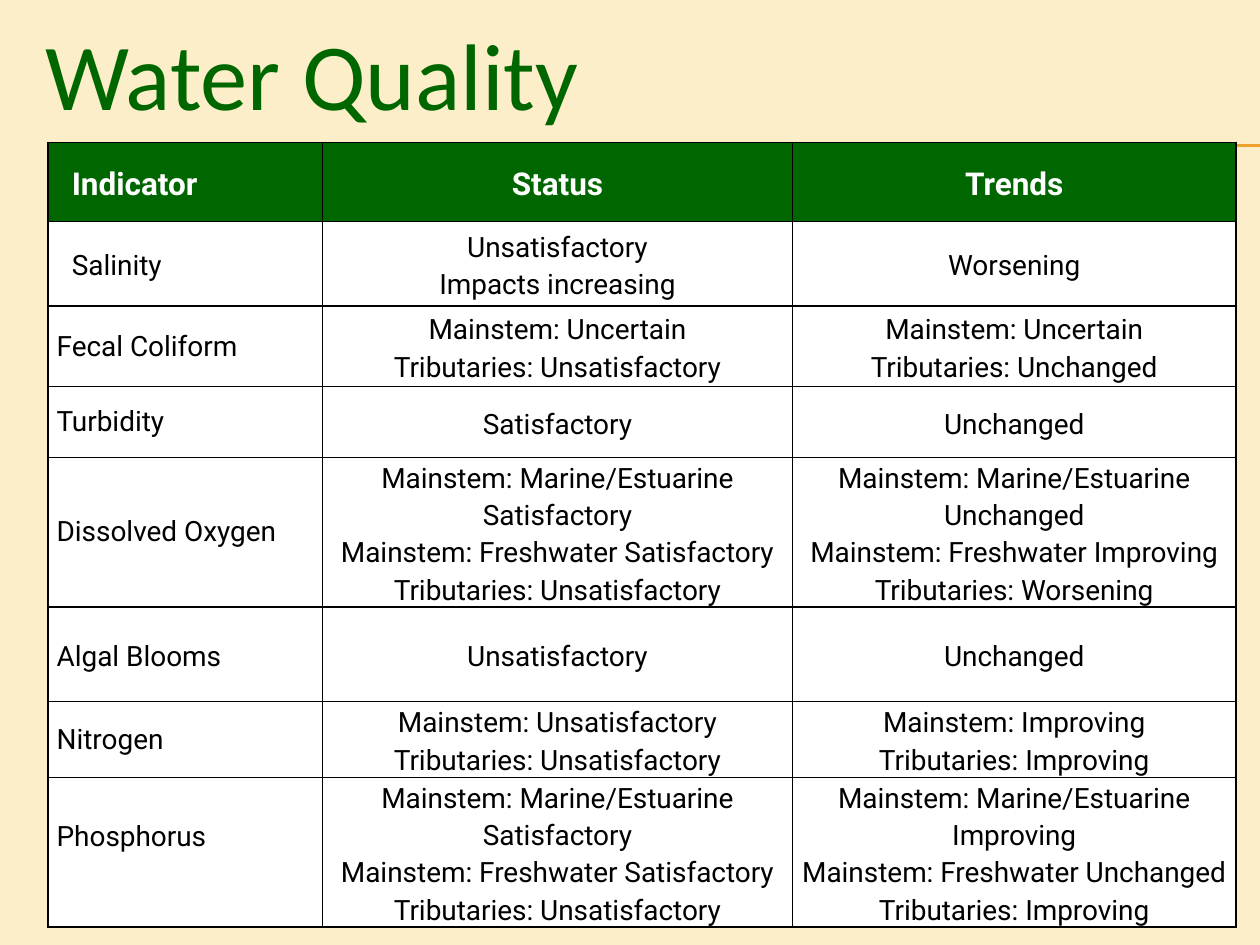
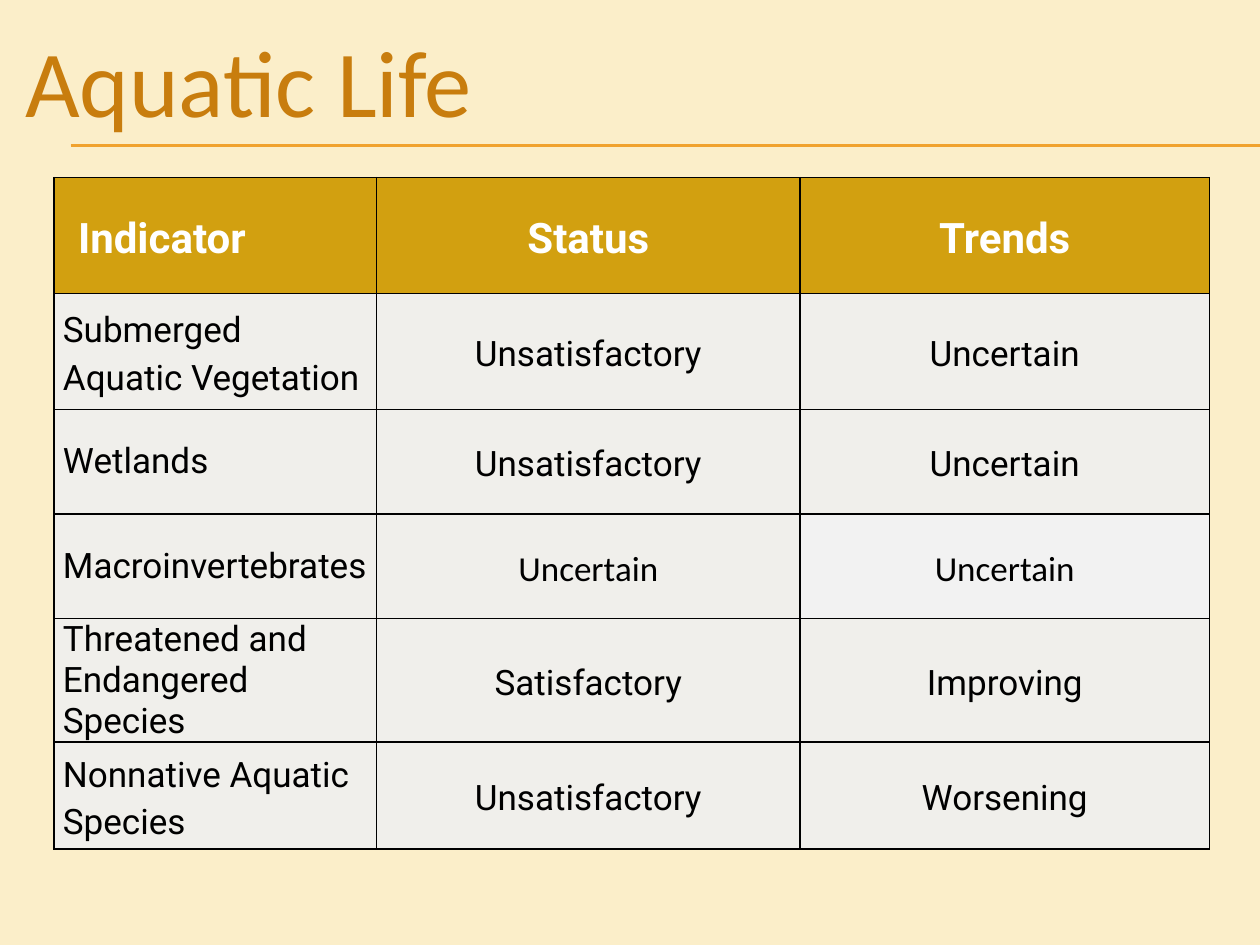
from dataclasses import dataclass
from lxml.etree import SubElement
from pptx import Presentation
from pptx.dml.color import RGBColor
from pptx.enum.shapes import MSO_CONNECTOR
from pptx.enum.text import MSO_ANCHOR, PP_ALIGN
from pptx.oxml import parse_xml
from pptx.oxml.ns import nsdecls, qn
from pptx.util import Inches, Pt

SAND, RULE, BLACK, WHITE = "FBEEC9", "F0A22E", "000000", "FFFFFF"
HEAD_FONT, BODY_FONT = "Calibri", "Roboto"
LOOSE = 1.15
RULE_LEFT, WIDTH, HEIGHT = 0.56, 10, 7.5


@dataclass
class Entry:
    height: float
    label: str
    status: str
    trend: str
    loose: bool = False
    indent: float = 0
    foot: float = 0
    font: str = BODY_FONT
    trend_fill: str = ""


@dataclass
class Page:
    title: str
    title_box: tuple[float, float, float, float]
    title_hue: str
    left: float
    top: float
    cols: list[float]
    head_fill: str
    body_fill: str
    head_size: int
    body_size: int
    rows: list[Entry]


def rgb(hue: str) -> RGBColor:
    return RGBColor.from_string(hue)


def header(height: float) -> Entry:
    return Entry(height, "Indicator", "Status", "Trends", True, 0.12)


def add_rules(slide) -> None:
    for y in (1.15, 1.16):
        rule = slide.shapes.add_connector(
            MSO_CONNECTOR.STRAIGHT, Inches(RULE_LEFT), Inches(y), Inches(WIDTH), Inches(y))
        rule.line.color.rgb = rgb(RULE)
        rule.line.width = Pt(0.75)
        SubElement(rule.element.spPr, qn("a:effectLst"))


def add_title(slide, page: Page) -> None:
    box = slide.shapes.add_textbox(*map(Inches, page.title_box))
    frame = box.text_frame
    frame.word_wrap = True
    frame.vertical_anchor = MSO_ANCHOR.MIDDLE
    para = frame.paragraphs[0]
    para.text = page.title
    para.font.size, para.font.name = Pt(54), HEAD_FONT
    para.font.color.rgb = rgb(page.title_hue)


def add_border(cell) -> None:
    props = cell._tc.get_or_add_tcPr()
    for spot, side in enumerate("LRTB"):
        props.insert(spot, parse_xml(
            f'<a:ln{side} {nsdecls("a")} w="{Pt(1)}"><a:solidFill>'
            f'<a:srgbClr val="{BLACK}"/></a:solidFill></a:ln{side}>'))


def fill_cell(cell, text: str, fill: str, size: int, font: str, head: bool,
              center: bool, loose: bool, indent: float, foot: float) -> None:
    cell.margin_left = cell.margin_right = Inches(0.07)
    cell.margin_top, cell.margin_bottom = 0, Inches(foot)
    cell.vertical_anchor = MSO_ANCHOR.MIDDLE
    cell.fill.solid()
    cell.fill.fore_color.rgb = rgb(fill)
    add_border(cell)
    cell.text_frame.text = text
    for para in cell.text_frame.paragraphs:
        para.alignment = PP_ALIGN.CENTER if center else PP_ALIGN.LEFT
        para.line_spacing = LOOSE if loose else 1.0
        if indent:
            para._p.get_or_add_pPr().set("marL", str(Inches(indent)))
        para.font.size, para.font.name, para.font.bold = Pt(size), font, head
        para.font.color.rgb = rgb(WHITE if head else BLACK)


def add_grid(slide, page: Page) -> None:
    table = slide.shapes.add_table(
        len(page.rows), len(page.cols), Inches(page.left), Inches(page.top),
        Inches(sum(page.cols)), Inches(sum(row.height for row in page.rows))).table
    for col, width in zip(table.columns, page.cols):
        col.width = Inches(width)
    for i, row in enumerate(page.rows):
        table.rows[i].height = Inches(row.height)
        head = i == 0
        fill = page.head_fill if head else page.body_fill
        size = page.head_size if head else page.body_size
        fill_cell(table.cell(i, 0), row.label, fill, size, BODY_FONT, head,
                  False, row.loose, row.indent, row.foot)
        for j, (text, hue) in enumerate(((row.status, fill), (row.trend, row.trend_fill or fill)), 1):
            fill_cell(table.cell(i, j), text, hue, size, row.font, head, True, True, 0, 0)


WATER = Page(
    "Water Quality", (0.26, 0.19, 9.82, 0.77), "006600", 0.38, 1.13, [2.18, 3.73, 3.52],
    "006600", WHITE, 18, 16, [
        header(0.63),
        Entry(0.67, "Salinity", "Unsatisfactory\nImpacts increasing", "Worsening", True, 0.12),
        Entry(0.64, "Fecal Coliform", "Mainstem: Uncertain\nTributaries: Unsatisfactory",
              "Mainstem: Uncertain\nTributaries: Unchanged"),
        Entry(0.56, "Turbidity", "Satisfactory", "Unchanged"),
        Entry(1.19, "Dissolved Oxygen",
              "Mainstem: Marine/Estuarine Satisfactory\n"
              "Mainstem: Freshwater Satisfactory\nTributaries: Unsatisfactory",
              "Mainstem: Marine/Estuarine Unchanged\n"
              "Mainstem: Freshwater Improving\nTributaries: Worsening"),
        Entry(0.75, "Algal Blooms", "Unsatisfactory", "Unchanged", True),
        Entry(0.6, "Nitrogen", "Mainstem: Unsatisfactory\nTributaries: Unsatisfactory",
              "Mainstem: Improving\nTributaries: Improving"),
        Entry(1.19, "Phosphorus",
              "Mainstem: Marine/Estuarine Satisfactory\n"
              "Mainstem: Freshwater Satisfactory\nTributaries: Unsatisfactory",
              "Mainstem: Marine/Estuarine Improving\n"
              "Mainstem: Freshwater Unchanged\nTributaries: Improving", foot=0.25),
    ])

LIFE = Page(
    "Aquatic Life", (0.1, 0.17, 9.82, 0.92), "C87D0E", 0.43, 1.41, [2.56, 3.36, 3.25],
    "D2A010", "F0EFEB", 24, 20, [
        header(0.92),
        Entry(0.92, "Submerged Aquatic Vegetation", "Unsatisfactory", "Uncertain", True),
        Entry(0.83, "Wetlands", "Unsatisfactory", "Uncertain"),
        Entry(0.83, "Macroinvertebrates", "Uncertain", "Uncertain",
              font=HEAD_FONT, trend_fill="F2F2F2"),
        Entry(0.98, "Threatened and Endangered Species", "Satisfactory", "Improving"),
        Entry(0.85, "Nonnative Aquatic Species", "Unsatisfactory", "Worsening", True),
    ])


def main() -> None:
    deck = Presentation()
    deck.slide_width, deck.slide_height = Inches(WIDTH), Inches(HEIGHT)
    for page in (WATER, LIFE):
        slide = deck.slides.add_slide(deck.slide_layouts[6])
        slide.background.fill.solid()
        slide.background.fill.fore_color.rgb = rgb(SAND)
        add_rules(slide)
        add_grid(slide, page)
        add_title(slide, page)
    deck.save("out.pptx")


if __name__ == "__main__":
    main()
